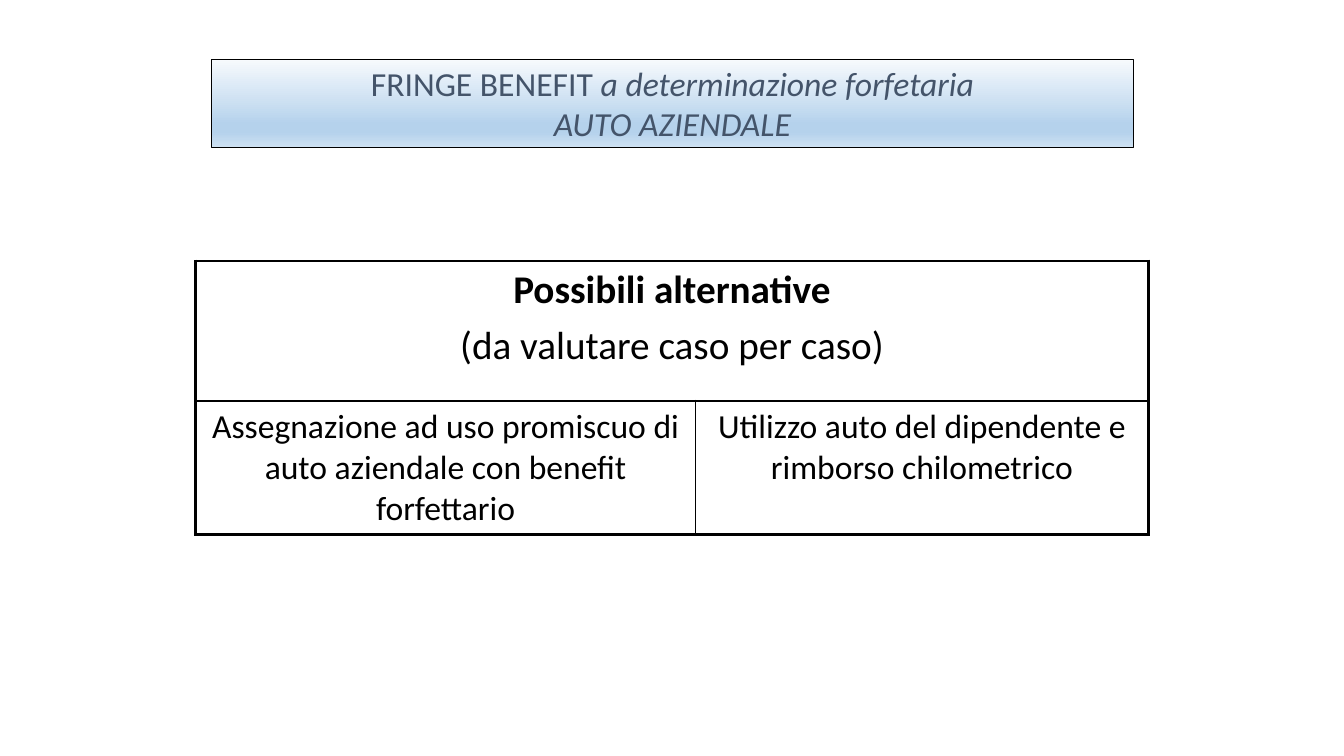
from dataclasses import dataclass

from lxml import etree
from pptx import Presentation
from pptx import util as u
from pptx.dml.color import RGBColor
from pptx.enum import text
from pptx.oxml import ns


@dataclass(frozen=True)
class Theme:
    font: str = "Calibri"
    ink: str = "000000"
    title_ink: str = "44546A"
    gradient: tuple = ((0, "F7FAFD"), (74, "B5D2EC"), (83, "B5D2EC"), (100, "CEE1F2"))
    title_size: int = 24
    heading_size: int = 28
    body_size: int = 24
    hairline: float = 0.75
    thin: float = 1
    thick: float = 2.25


def add_element(parent, tag, **attributes):
    child = etree.SubElement(parent, ns.qn(tag))
    for name, value in attributes.items():
        child.set(name, str(value))
    return child


def add_runs(paragraph, runs, *, font, size, color, space_before=0):
    """Fill a centred paragraph with (wording, font options) runs."""
    paragraph.alignment = text.PP_ALIGN.CENTER
    paragraph.space_before = u.Pt(space_before)
    for wording, options in runs:
        run = paragraph.add_run()
        run.text = wording
        run.font.name = font
        run.font.size = u.Pt(size)
        run.font.color.rgb = RGBColor.from_string(color)
        run.font.bold = options.get("bold", False)
        run.font.italic = options.get("italic", False)


class SlideBuilder:
    """Places elements in percent of the slide's width and height."""

    def __init__(self, presentation, theme):
        self.presentation = presentation
        self.theme = theme
        self.slide = presentation.slides.add_slide(presentation.slide_layouts[5])

    def across(self, percent):
        return u.Emu(round(self.presentation.slide_width * percent / 100))

    def down(self, percent):
        return u.Emu(round(self.presentation.slide_height * percent / 100))

    def fill_text(self, frame, paragraphs, size, color, gap=0.0):
        for index, runs in enumerate(paragraphs):
            paragraph = frame.add_paragraph() if index else frame.paragraphs[0]
            add_runs(paragraph, runs, font=self.theme.font, size=size, color=color,
                     space_before=gap * size if index else 0)

    def title(self, left, top, width, height, paragraphs):
        shape = self.slide.shapes.title
        shape.left, shape.top = self.across(left), self.down(top)
        shape.width, shape.height = self.across(width), self.down(height)
        shape.line.color.rgb = RGBColor.from_string(self.theme.ink)
        shape.line.width = u.Pt(self.theme.hairline)
        self.gradient(shape)
        frame = shape.text_frame
        frame.auto_size = text.MSO_AUTO_SIZE.NONE
        frame.word_wrap = False
        frame.vertical_anchor = text.MSO_ANCHOR.MIDDLE
        self.fill_text(frame, paragraphs, self.theme.title_size, self.theme.title_ink)

    def gradient(self, shape):
        shape.fill.gradient()
        shape.fill.gradient_angle = 270
        stops = shape.element.spPr.find(".//" + ns.qn("a:gsLst"))
        for stop in list(stops):
            stops.remove(stop)
        for position, color in self.theme.gradient:
            stop = add_element(stops, "a:gs", pos=position * 1000)
            add_element(stop, "a:srgbClr", val=color)

    def table(self, left, top, columns, rows):
        shape = self.slide.shapes.add_table(
            len(rows), len(columns), self.across(left), self.down(top),
            self.across(sum(columns)), self.down(sum(rows)))
        table = shape.table
        table.first_row = table.horz_banding = False
        for column, width in zip(table.columns, columns):
            column.width = self.across(width)
        for row, height in zip(table.rows, rows):
            row.height = self.down(height)
        for cell in table.iter_cells():
            cell.fill.background()
        return table

    def borders(self, cell, **widths):
        properties = cell._tc.get_or_add_tcPr()
        for index, side in enumerate("LRTB"):
            width = widths.get(side, self.theme.thick)
            line = add_element(properties, f"a:ln{side}", w=int(u.Pt(width)))
            add_element(add_element(line, "a:solidFill"), "a:srgbClr", val=self.theme.ink)
            properties.insert(index, line)


def main():
    presentation = Presentation()
    presentation.slide_width = u.Inches(13.33)
    presentation.slide_height = u.Inches(7.5)
    theme = Theme()
    builder = SlideBuilder(presentation, theme)

    # Title banner
    builder.title(15.75, 7.87, 68.57, 11.6, [
        [("FRINGE BENEFIT ", {}), ("a determinazione forfetaria", {"italic": True})],
        [("AUTO AZIENDALE", {"italic": True})],
    ])

    # Table heading across both columns
    table = builder.table(14.55, 34.53, columns=(37.21, 33.68), rows=(18.53, 17.33))
    heading = table.cell(0, 0)
    heading.merge(table.cell(0, 1))
    builder.fill_text(heading.text_frame, [
        [("Possibili alternative", {"bold": True})],
        [("(da valutare caso per caso)", {})],
    ], theme.heading_size, theme.ink, gap=0.2)
    for column in range(2):
        builder.borders(table.cell(0, column))

    # The two alternatives, parted by a thin line
    alternatives = (
        ("Assegnazione ad uso promiscuo di auto aziendale con benefit forfettario", "R"),
        ("Utilizzo auto del dipendente e rimborso chilometrico", "L"),
    )
    for column, (wording, inner_side) in enumerate(alternatives):
        cell = table.cell(1, column)
        builder.fill_text(cell.text_frame, [[(wording, {})]], theme.body_size, theme.ink)
        builder.borders(cell, **{inner_side: theme.thin})

    presentation.save("out.pptx")


if __name__ == "__main__":
    main()
